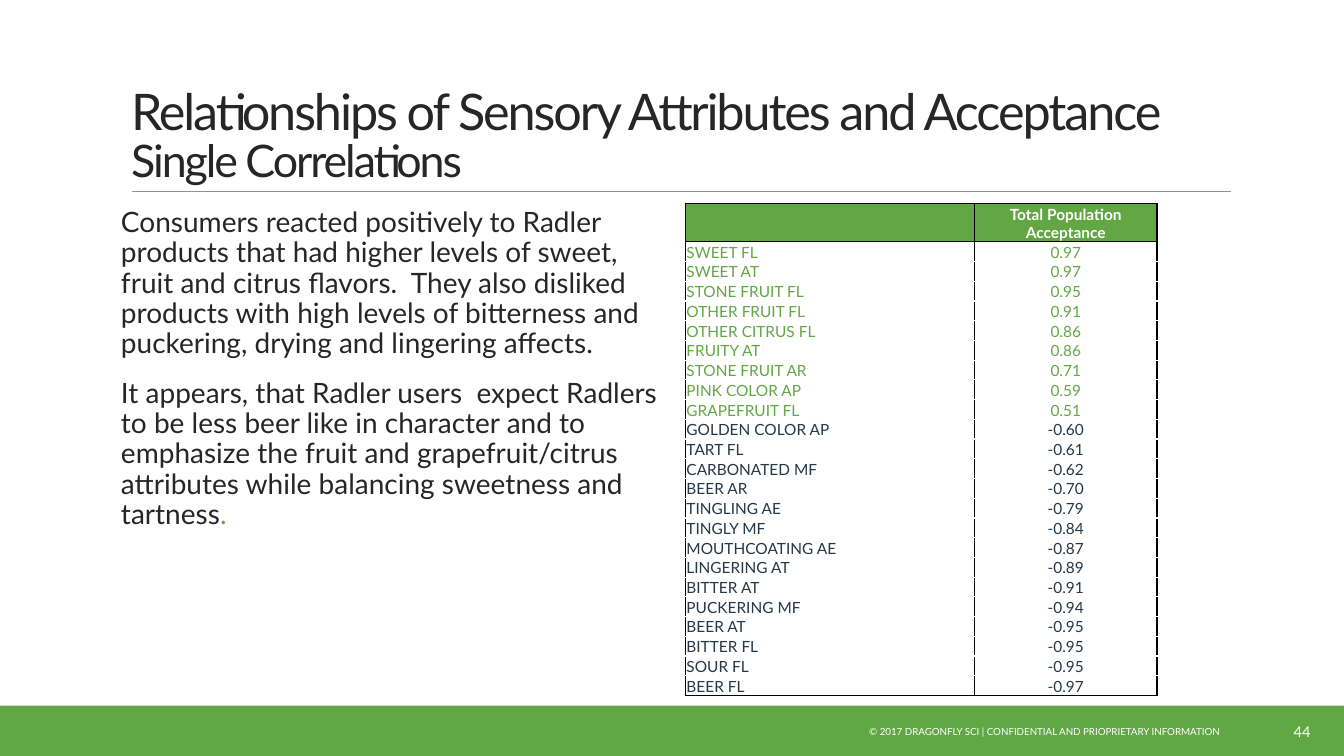
"""Build the slide on sensory attributes and Radler acceptance."""
from copy import deepcopy

from lxml import etree
from pptx import Presentation
from pptx import util as u
from pptx.dml.color import RGBColor
from pptx.enum import shapes, text
from pptx.oxml.ns import qn

GREEN = RGBColor(0x61, 0xA7, 0x44)
TABLE_GREEN = RGBColor(0x62, 0xA7, 0x44)
INK = RGBColor(0x26, 0x26, 0x26)
NAVY = RGBColor(0x26, 0x37, 0x46)
GREY = RGBColor(0x92, 0x92, 0x92)
WHITE = RGBColor(0xFF, 0xFF, 0xFF)

CORRELATIONS = [
    ("SWEET FL", 0.97), ("SWEET AT", 0.97), ("STONE FRUIT FL", 0.95),
    ("OTHER FRUIT FL", 0.91), ("OTHER CITRUS FL", 0.86), ("FRUITY AT", 0.86),
    ("STONE FRUIT AR", 0.71), ("PINK COLOR AP", 0.59), ("GRAPEFRUIT FL", 0.51),
    ("GOLDEN COLOR AP", -0.60), ("TART FL", -0.61), ("CARBONATED MF", -0.62),
    ("BEER AR", -0.70), ("TINGLING AE", -0.79), ("TINGLY MF", -0.84),
    ("MOUTHCOATING AE", -0.87), ("LINGERING AT", -0.89), ("BITTER AT", -0.91),
    ("PUCKERING MF", -0.94), ("BEER AT", -0.95), ("BITTER FL", -0.95),
    ("SOUR FL", -0.95), ("BEER FL", -0.97),
]


def add_run(p, content, size, color, bold=False, spacing=0):
    for i, line in enumerate(content.split("\n")):
        if i:
            p.add_line_break()
            p._p[-1].append(deepcopy(r._r.rPr))
        r = p.add_run()
        r.text = line
        r.font.color.rgb = color
        for name, value in {"name": "Lato", "size": u.Pt(size), "bold": bold}.items():
            setattr(r.font, name, value)
        if spacing:
            r._r.rPr.set("spc", str(spacing))


def add_border(cell, side):
    ln = etree.SubElement(cell._tc.get_or_add_tcPr(), qn(f"a:ln{side}"), w=str(u.Pt(1)))
    fill = etree.SubElement(ln, qn("a:solidFill"))
    etree.SubElement(fill, qn("a:srgbClr"), val="000000")


prs = Presentation()
prs.slide_width, prs.slide_height = u.Cm(33.87), u.Cm(19.05)
s = prs.slides.add_slide(prs.slide_layouts[5])

band = s.shapes.add_shape(shapes.MSO_SHAPE.RECTANGLE, 0, u.Cm(17.78), prs.slide_width, u.Cm(1.27))
band.shadow.inherit = False
band.fill.solid()
band.fill.fore_color.rgb = GREEN
band.line.fill.background()

rule = s.shapes.add_connector(
    shapes.MSO_CONNECTOR.STRAIGHT, u.Cm(3.33), u.Cm(4.82), u.Cm(31.01), u.Cm(4.82))
rule.line.color.rgb = GREY
rule.line.width = u.Pt(0.5)
etree.SubElement(rule._element.spPr, qn("a:effectLst"))

title = s.shapes.title
box = {"left": 3.05, "top": 0.79, "width": 29.26, "height": 4.04}
for name, value in box.items():
    setattr(title, name, u.Cm(value))
tf = title.text_frame
frame = {"word_wrap": True, "auto_size": text.MSO_AUTO_SIZE.NONE,
         "vertical_anchor": text.MSO_ANCHOR.BOTTOM}
for name, value in frame.items():
    setattr(tf, name, value)
p = tf.paragraphs[0]
p.alignment = text.PP_ALIGN.LEFT
p.line_spacing = 0.85
add_run(p, "Relationships of Sensory Attributes and Acceptance\n", 36, INK, spacing=-150)
add_run(p, "Single Correlations", 32, INK, spacing=-150)

tf = s.shapes.add_textbox(u.Cm(3.05), u.Cm(5.13), u.Cm(13.72), u.Cm(11.18)).text_frame
tf.word_wrap = True
tf.margin_left = tf.margin_right = 0
p = tf.paragraphs[0]
add_run(p, "Consumers reacted positively to Radler products that had higher levels of sweet, "
        "fruit and citrus flavors.  They also disliked products with high levels of "
        "bitterness and puckering, drying and lingering affects.", 20, INK)
p = tf.add_paragraph()
p.space_before = u.Pt(12)
add_run(p, "It appears, that Radler users  expect Radlers to be less beer like in character "
        "and to emphasize the fruit and grapefruit/citrus attributes while balancing "
        "sweetness and tartness", 20, INK)
add_run(p, ".", 20, GREEN)
for p in tf.paragraphs:
    p.line_spacing = 0.9
    p.space_after = u.Pt(2)

footers = [
    (19.79, 11.2, "© 2017 DRAGONFLY SCI | CONFIDENTIAL AND PRIOPRIETARY INFORMATION", 7),
    (30.99, 2.29, "44", 10.5),
]
for left, width, content, size in footers:
    tf = s.shapes.add_textbox(u.Cm(left), u.Cm(17.93), u.Cm(width), u.Cm(1.02)).text_frame
    tf.word_wrap = True
    tf.vertical_anchor = text.MSO_ANCHOR.MIDDLE
    p = tf.paragraphs[0]
    p.alignment = text.PP_ALIGN.RIGHT
    add_run(p, content, size, WHITE)

rows = [("", "Total Population\nAcceptance", WHITE)]
rows += [(name, f"{value:.2f}", TABLE_GREEN if value > 0 else NAVY)
         for name, value in CORRELATIONS]
table = s.shapes.add_table(
    len(rows), 2, u.Cm(17.27), u.Cm(5.13), u.Cm(11.89), u.Cm(12.27)).table
table.first_row = table.horz_banding = False
table.columns[0].width, table.columns[1].width = u.Cm(7.29), u.Cm(4.6)
cell_format = {"margin_left": u.Cm(0.03), "margin_right": u.Cm(0.03),
               "margin_top": u.Cm(0.03), "margin_bottom": 0,
               "vertical_anchor": text.MSO_ANCHOR.BOTTOM}
for i, (*contents, color) in enumerate(rows):
    header = i == 0
    table.rows[i].height = u.Cm(0.92 if header else 0.47)
    sides = "LR" + "T" * (i < 2) + "B" * (i in (0, len(rows) - 1))
    for j, content in enumerate(contents):
        cell = table.cell(i, j)
        for name, value in cell_format.items():
            setattr(cell, name, value)
        for side in sides:
            add_border(cell, side)
        if header:
            cell.fill.solid()
            cell.fill.fore_color.rgb = TABLE_GREEN
        else:
            cell.fill.background()
        if content:
            p = cell.text_frame.paragraphs[0]
            p.alignment = text.PP_ALIGN.CENTER if j else text.PP_ALIGN.LEFT
            add_run(p, content, 11, color, bold=header)

prs.save("out.pptx")
